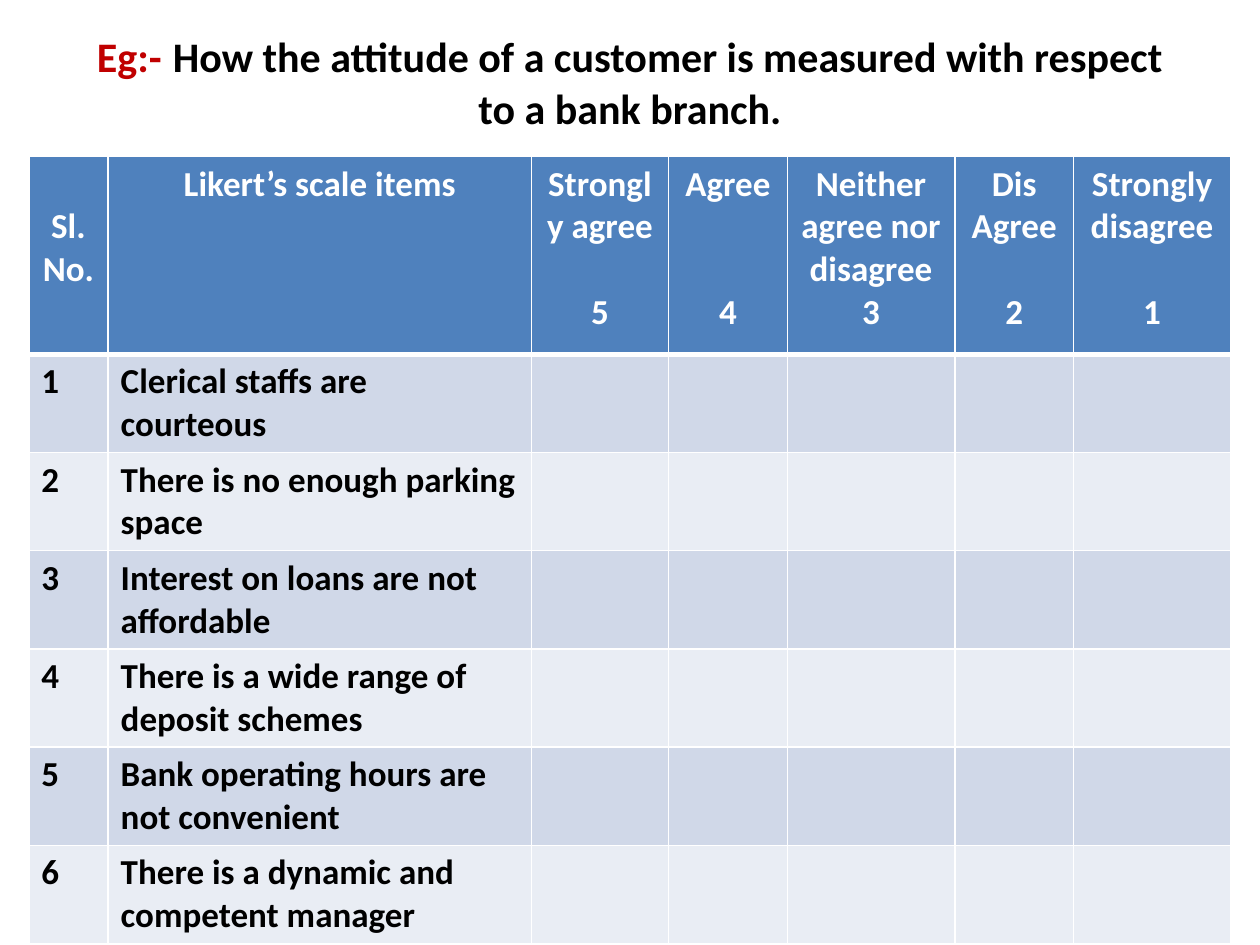
import dataclasses
import typing

import lxml.etree
import pptx
import pptx.dml.color
import pptx.enum.text
import pptx.oxml.ns
import pptx.util

Cm = pptx.util.Cm
Pt = pptx.util.Pt
ALIGN = pptx.enum.text.PP_ALIGN

COLORS = {
    "accent": "C00000",
    "text": "000000",
    "white": "FFFFFF",
    "header": "4F81BD",
    "odd": "D0D8E8",
    "even": "E9EDF4",
}
FONT = "Calibri"
LINE_HEIGHT = 24.4  # one line of 20 pt text, in points


@dataclasses.dataclass
class Column:
    width: float
    lines: tuple[str, ...]
    gap_lines: int = 0  # empty lines above the score
    top_margin: float = 0.13


COLUMNS = [
    Column(1.6, ("Sl.", "No."), top_margin=0.99),
    Column(8.53, ("Likert’s scale items",)),
    Column(2.77, ("Strongly agree", "5"), 1),
    Column(2.39, ("Agree", "4"), 2),
    Column(3.38, ("Neither agree nor disagree", "3")),
    Column(2.39, ("Dis", "Agree", "2"), 1),
    Column(3.17, ("Strongly disagree", "1"), 1),
]
ITEMS = [
    "Clerical staffs are courteous",
    "There is no enough parking space",
    "Interest on loans are not affordable",
    "There is a wide range of deposit schemes",
    "Bank operating hours are not convenient",
    "There is a dynamic and competent manager",
]


def add_text(para: typing.Any, text: str, *, size: float = 20, color: str = "text",
             bold: bool = True, align: ALIGN = ALIGN.LEFT) -> None:
    """Add a formatted span to a paragraph."""
    para.alignment = align
    span = para.add_run()
    span.text = text
    span.font.name = FONT
    span.font.size = Pt(size)
    span.font.bold = bold
    span.font.color.rgb = pptx.dml.color.RGBColor.from_string(COLORS[color])


def style_cell(cell: typing.Any, fill: str, top: float = 1, bottom: float = 1) -> None:
    """Give a cell white borders and a plain fill."""
    properties = cell._tc.get_or_add_tcPr()
    qn = pptx.oxml.ns.qn
    for side, width in (("L", 1), ("R", 1), ("T", top), ("B", bottom)):
        line = lxml.etree.SubElement(properties, qn(f"a:ln{side}"), w=str(Pt(width)))
        solid = lxml.etree.SubElement(line, qn("a:solidFill"))
        lxml.etree.SubElement(solid, qn("a:srgbClr"), val=COLORS["white"])
    cell.fill.solid()
    cell.fill.fore_color.rgb = pptx.dml.color.RGBColor.from_string(COLORS[fill])


def add_title(page: typing.Any) -> None:
    box = page.shapes.add_textbox(Cm(1.27), Cm(0), Cm(22.86), Cm(3.17))
    frame = box.text_frame
    frame.word_wrap = True
    frame.vertical_anchor = pptx.enum.text.MSO_ANCHOR.MIDDLE
    para = frame.paragraphs[0]
    add_text(para, "Eg:-", size=24, color="accent", align=ALIGN.CENTER)
    add_text(para, " ", size=28, bold=False, align=ALIGN.CENTER)
    add_text(para, "How the attitude of a customer is measured with respect "
             "to a bank branch.", size=24, align=ALIGN.CENTER)


def fill_header(cell: typing.Any, column: Column) -> None:
    style_cell(cell, "header", bottom=3)
    cell.margin_top = Cm(column.top_margin)
    frame = cell.text_frame
    for index, line in enumerate(column.lines):
        para = frame.add_paragraph() if index else frame.paragraphs[0]
        add_text(para, line, color="white", align=ALIGN.CENTER)
    if column.gap_lines:
        para.space_before = Pt(column.gap_lines * LINE_HEIGHT)


def add_scale_table(page: typing.Any) -> None:
    header_height, item_height = 3.99, 1.98
    table = page.shapes.add_table(
        len(ITEMS) + 1, len(COLUMNS), Cm(0.58), Cm(3.15),
        Cm(sum(column.width for column in COLUMNS)),
        Cm(header_height + item_height * len(ITEMS)),
    ).table

    # Header row
    table.rows[0].height = Cm(header_height)
    for index, column in enumerate(COLUMNS):
        table.columns[index].width = Cm(column.width)
        fill_header(table.cell(0, index), column)

    # Numbered items, with empty cells for the answers
    for number, item in enumerate(ITEMS, start=1):
        row = table.rows[number]
        row.height = Cm(item_height)
        for cell in row.cells:
            style_cell(cell, "odd" if number % 2 else "even", top=3 if number == 1 else 1)
        for cell, text in zip(row.cells, (str(number), item)):
            add_text(cell.text_frame.paragraphs[0], text)


def main() -> None:
    deck = pptx.Presentation()
    deck.slide_width, deck.slide_height = Cm(25.4), Cm(19.05)
    page = deck.slides.add_slide(deck.slide_layouts[6])
    add_title(page)
    add_scale_table(page)
    deck.save("out.pptx")


if __name__ == "__main__":
    main()
